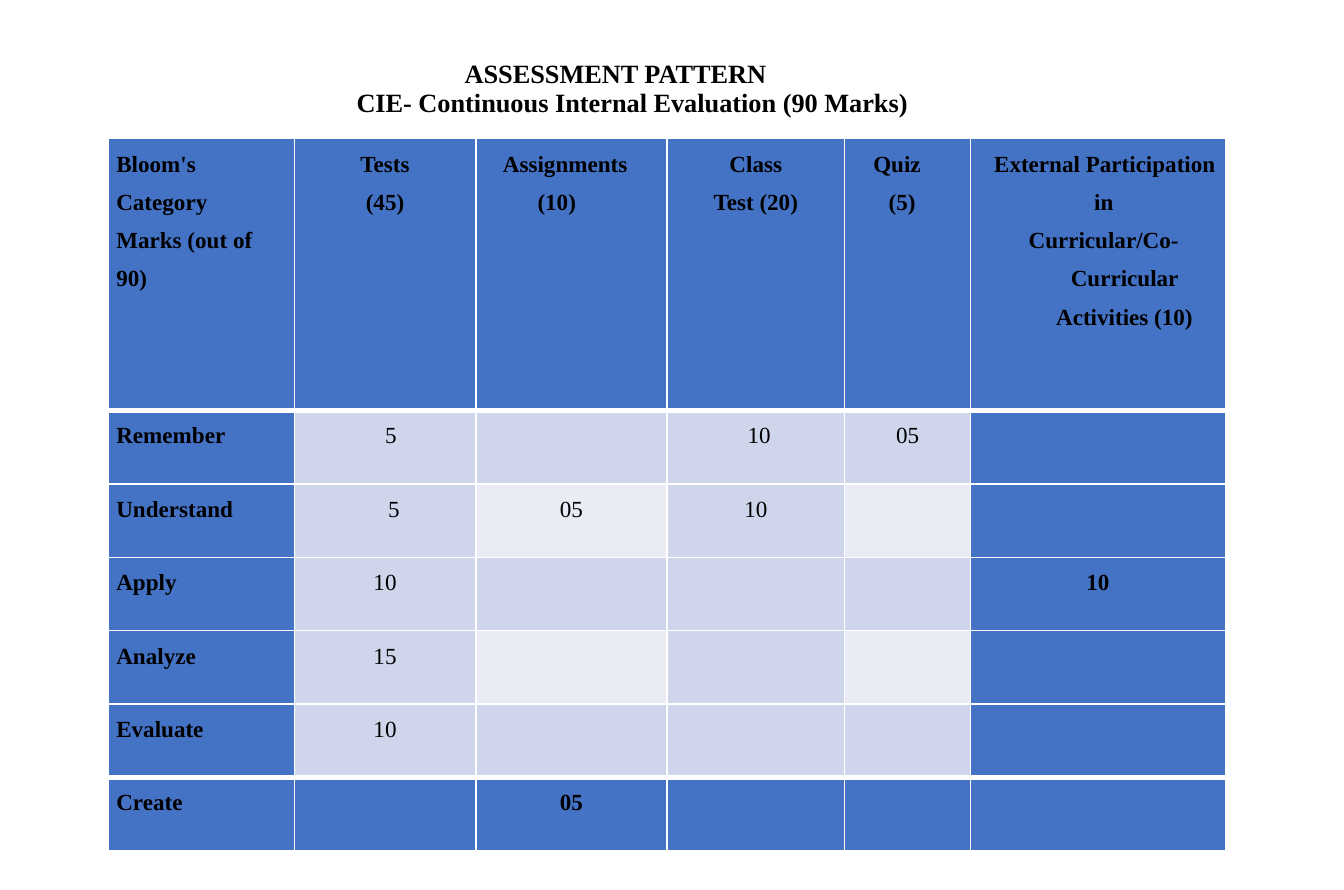
from pptx import Presentation
from pptx.dml.color import RGBColor
from pptx.enum import text
from pptx.oxml import parse_xml
from pptx.oxml.ns import nsdecls
from pptx.util import Cm, Pt

COLORS = {"ink": "000000", "blue": "4472C4", "band": "CFD5EA",
          "pale": "E9EBF5", "border": "FFFFFF"}
LEFT, CENTER = text.PP_ALIGN.LEFT, text.PP_ALIGN.CENTER


def write(frame, paragraphs, size, bold, spacing):
    """Fill a frame from (text, alignment, left margin, first indent, right margin), in cm."""
    for number, (words, alignment, left, indent, right) in enumerate(paragraphs):
        paragraph = frame.add_paragraph() if number else frame.paragraphs[0]
        paragraph.alignment = alignment
        paragraph.line_spacing = spacing
        properties = paragraph._p.get_or_add_pPr()
        for key, value in {"marL": left, "indent": indent, "marR": right}.items():
            properties.set(key, str(int(Cm(value))))
        run = paragraph.add_run()
        run.text = words
        for key, value in {"name": "Times New Roman", "size": Pt(size), "bold": bold}.items():
            setattr(run.font, key, value)
        run.font.color.rgb = RGBColor.from_string(COLORS["ink"])


def set_borders(cell, widths):
    for side, width in widths.items():
        cell._tc.get_or_add_tcPr().append(parse_xml(
            f'<a:ln{side} {nsdecls("a")} w="{Pt(width)}"><a:solidFill>'
            f'<a:srgbClr val="{COLORS["border"]}"/></a:solidFill></a:ln{side}>'))


deck = Presentation()
deck.slide_width, deck.slide_height = Cm(28.78), Cm(19.05)
slide = deck.slides.add_slide(deck.slide_layouts[6])

# Assessment table
column_widths = [3.99, 3.89, 4.09, 3.81, 2.69, 5.46]
row_heights = [5.82] + [1.57] * 6
last_row, last_column = len(row_heights) - 1, len(column_widths) - 1
assessment = slide.shapes.add_table(
    len(row_heights), len(column_widths), Cm(2.31), Cm(2.97),
    Cm(sum(column_widths)), Cm(sum(row_heights))).table
for column, width in zip(assessment.columns, column_widths):
    column.width = Cm(width)
for row, height in zip(assessment.rows, row_heights):
    row.height = Cm(height)

headings = [
    [("Bloom's Category Marks (out of 90)", LEFT, 0.18, 0, 0.5)],
    [("Tests (45)", CENTER, 0.97, 0, 0.97)],
    [("Assignments (10)", LEFT, 1.32, -0.74, 0.5)],
    [("Class", CENTER, 1.32, -0.74, 0.58), ("Test (20)", CENTER, 1.32, -0.74, 0.58)],
    [("Quiz (5)", LEFT, 0.94, -0.33, 0.7)],
    [("External Participation in", CENTER, 0.25, 0.05, 0),
     ("Curricular/Co-Curricular Activities (10)", CENTER, 1.14, -0.89, 0)],
]
contents = {(0, column): heading for column, heading in enumerate(headings)}
categories = ["Remember", "Understand", "Apply", "Analyze", "Evaluate", "Create"]
for row, category in enumerate(categories, 1):
    contents[row, 0] = [(category, LEFT, 0.18, 0, 0)]
centered_marks = {(3, 1): "10", (4, 1): "15", (5, 1): "10", (2, 2): "05", (6, 2): "05",
                  (2, 3): "10", (1, 4): "05", (3, 5): "10"}
for place, mark in centered_marks.items():
    contents[place] = [(mark, CENTER, 0, 0, 0)]
contents[1, 1] = [("5", CENTER, 0.25, 0, 0)]
contents[2, 1] = [("5", CENTER, 0.38, 0, 0)]
contents[1, 3] = [("10", LEFT, 1.73, 0, 0)]

for row in range(last_row + 1):
    for column in range(last_column + 1):
        cell = assessment.cell(row, column)
        emphasized = row in (0, last_row) or column in (0, last_column)
        if emphasized:
            fill = "blue"
        elif row % 2 == 0 and column % 2 == 0:
            fill = "pale"
        else:
            fill = "band"
        set_borders(cell, {"L": 1, "R": 1,
                           "T": 3 if row in (1, last_row) else 1,
                           "B": 3 if row in (0, last_row - 1) else 1})
        cell.fill.solid()
        cell.fill.fore_color.rgb = RGBColor.from_string(COLORS[fill])
        for side in ("left", "right", "top", "bottom"):
            setattr(cell, f"margin_{side}", 0)
        write(cell.text_frame, contents.get((row, column), []), 14, emphasized, 1.5)

# Title
title = slide.shapes.add_textbox(Cm(4.22), Cm(1.17), Cm(17.78), Cm(1.5)).text_frame
title_format = {"word_wrap": True, "vertical_anchor": text.MSO_ANCHOR.MIDDLE,
                "margin_left": Cm(0.13), "margin_right": Cm(0.13),
                "margin_top": Cm(0.08), "margin_bottom": Cm(0.08)}
for key, value in title_format.items():
    setattr(title, key, value)
write(title, [("ASSESSMENT PATTERN", CENTER, 0.14, 0, 0),
              ("CIE- Continuous Internal Evaluation (90 Marks)", CENTER, 0.86, 0, 0)],
      16, True, 0.9)

deck.save("out.pptx")
